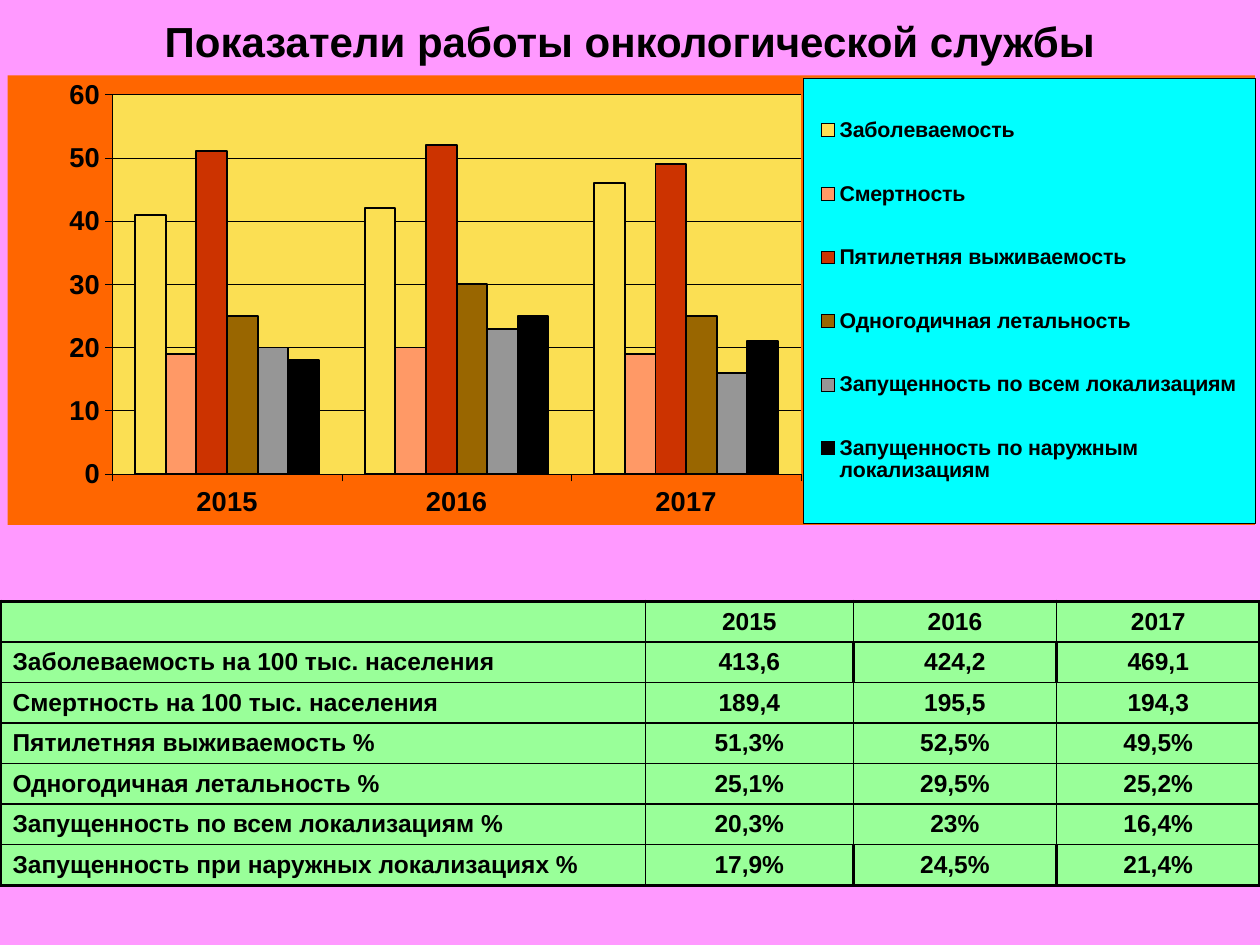
from pptx import Presentation
from pptx.chart.data import CategoryChartData
from pptx.dml.color import RGBColor
from pptx.enum.chart import (XL_CHART_TYPE as ChartType, XL_LEGEND_POSITION as LegendPos,
                             XL_TICK_LABEL_POSITION as LabelPos, XL_TICK_MARK as Tick)
from pptx.enum.text import MSO_ANCHOR as Anchor, PP_ALIGN as Align
from pptx.oxml import parse_xml
from pptx.oxml.ns import nsdecls, qn
from pptx.util import Pt

BLACK, PINK, ORANGE, YELLOW = "000000", "FF99FF", "FF6600", "FBDF53"
CYAN, GREEN = "00FFFF", "99FF99"
THIN, THICK = 1, 2.25

YEARS = ["2015", "2016", "2017"]
INDICATORS = [
    ("Заболеваемость", YELLOW, (41, 42, 46)),
    ("Смертность", "FF9966", (19, 20, 19)),
    ("Пятилетняя выживаемость", "CC3300", (51, 52, 49)),
    ("Одногодичная летальность", "996600", (25, 30, 25)),
    ("Запущенность по всем локализациям", "969696", (20, 23, 16)),
    ("Запущенность по наружным локализациям", BLACK, (18, 25, 21)),
]
ROWS = [
    ["", *YEARS],
    ["Заболеваемость на 100 тыс. населения", "413,6", "424,2", "469,1"],
    ["Смертность на 100 тыс. населения", "189,4", "195,5", "194,3"],
    ["Пятилетняя выживаемость %", "51,3%", "52,5%", "49,5%"],
    ["Одногодичная летальность %", "25,1%", "29,5%", "25,2%"],
    ["Запущенность по всем локализациям %", "20,3%", "23%", "16,4%"],
    ["Запущенность при наружных локализациях %", "17,9%", "24,5%", "21,4%"],
]


def color(hex_code):
    return RGBColor.from_string(hex_code)


def apply(target, formats):
    for name, value in formats.items():
        setattr(target, name, value)


def style_font(font, size):
    apply(font, {"name": "Arial", "size": Pt(size), "bold": True})
    font.color.rgb = color(BLACK)


def style_line(line, width):
    line.width = Pt(width)
    line.color.rgb = color(BLACK)


def chart_layout(x, y, w, h, inner=False):
    target = '<c:layoutTarget val="inner"/>' if inner else ""
    return parse_xml(
        f'<c:layout {nsdecls("c")}><c:manualLayout>{target}'
        '<c:xMode val="edge"/><c:yMode val="edge"/>'
        f'<c:x val="{x}"/><c:y val="{y}"/><c:w val="{w}"/><c:h val="{h}"/>'
        '</c:manualLayout></c:layout>')


def chart_area(fill, border=None):
    stroke = f'<a:solidFill><a:srgbClr val="{border}"/></a:solidFill>' if border else "<a:noFill/>"
    return parse_xml(
        f'<c:spPr {nsdecls("c", "a")}><a:solidFill><a:srgbClr val="{fill}"/></a:solidFill>'
        f'<a:ln w="{Pt(0.28)}">{stroke}</a:ln></c:spPr>')


def drop_layout(parent):
    for layout in parent.findall(qn("c:layout")):
        parent.remove(layout)


def add_title(slide, left, top, width, height):
    frame = slide.shapes.add_textbox(Pt(left), Pt(top), Pt(width), Pt(height)).text_frame
    apply(frame, {"word_wrap": True, "vertical_anchor": Anchor.MIDDLE})
    heading = frame.paragraphs[0]
    heading.alignment = Align.CENTER
    run = heading.add_run()
    run.text = "Показатели работы онкологической службы"
    style_font(run.font, 24)


def add_indicator_chart(slide, left, top, width, height):
    data = CategoryChartData()
    data.categories = YEARS
    for name, _, values in INDICATORS:
        data.add_series(name, values)
    chart = slide.shapes.add_chart(ChartType.COLUMN_CLUSTERED, Pt(left), Pt(top),
                                   Pt(width), Pt(height), data).chart
    chart.has_title = False
    style_font(chart.font, 15.6)

    # Columns
    plot = chart.plots[0]
    apply(plot, {"gap_width": 150, "overlap": 0, "vary_by_categories": False})
    for series, (_, fill, _) in zip(plot.series, INDICATORS):
        series.format.fill.solid()
        series.format.fill.fore_color.rgb = color(fill)
        style_line(series.format.line, 1.11)

    # Axes
    years, scale = chart.category_axis, chart.value_axis
    for axis in (years, scale):
        apply(axis, {"major_tick_mark": Tick.OUTSIDE, "minor_tick_mark": Tick.NONE})
        style_font(axis.tick_labels.font, 15.6)
        style_line(axis.format.line, 0.28)
    years.tick_label_position = LabelPos.LOW
    apply(scale, {"minimum_scale": 0, "maximum_scale": 60, "major_unit": 10,
                  "has_major_gridlines": True})
    style_line(scale.major_gridlines.format.line, 0.28)

    # Legend
    chart.has_legend = True
    legend = chart.legend
    apply(legend, {"position": LegendPos.RIGHT, "include_in_layout": False})
    style_font(legend.font, 12.2)
    box = legend.font and chart.element.find(".//" + qn("c:legend"))
    drop_layout(box)
    box.find(qn("c:legendPos")).addnext(chart_layout(0.638, 0.006, 0.362, 0.99))
    box.find(qn("c:txPr")).addprevious(chart_area(CYAN, BLACK))

    # Plot and chart backgrounds
    plot_area = chart.element.find(".//" + qn("c:plotArea"))
    drop_layout(plot_area)
    plot_area.insert(0, chart_layout(0.084, 0.043, 0.552, 0.844, inner=True))
    plot_area.append(chart_area(YELLOW))
    chart.element.find(qn("c:chart")).addnext(chart_area(ORANGE))


def set_borders(cell, widths):
    properties = cell._tc.get_or_add_tcPr()
    for index, (side, width) in enumerate(widths.items()):
        properties.insert(index, parse_xml(
            f'<a:ln{side} {nsdecls("a")} w="{Pt(width)}"><a:solidFill>'
            f'<a:srgbClr val="{BLACK}"/></a:solidFill></a:ln{side}>'))


def add_indicator_table(slide, left, top, column_widths, row_height):
    last_row, last_col = len(ROWS) - 1, len(column_widths) - 1
    table = slide.shapes.add_table(len(ROWS), len(column_widths), Pt(left), Pt(top),
                                   Pt(sum(column_widths)), Pt(row_height * len(ROWS))).table
    apply(table, {"first_row": False, "horz_banding": False})
    for column, width in zip(table.columns, column_widths):
        column.width = Pt(width)
    for r, texts in enumerate(ROWS):
        table.rows[r].height = Pt(row_height)
        for c, text in enumerate(texts):
            cell = table.cell(r, c)
            apply(cell, {"margin_top": Pt(3.2), "margin_bottom": Pt(3.2),
                         "vertical_anchor": Anchor.MIDDLE})
            cell.fill.solid()
            cell.fill.fore_color.rgb = color(GREEN)
            entry = cell.text_frame.paragraphs[0]
            entry.alignment = Align.CENTER if c else Align.LEFT
            if text:
                run = entry.add_run()
                run.text = text
                style_font(run.font, 14)
            else:
                entry._p.append(parse_xml(f'<a:endParaRPr {nsdecls("a")} sz="1400"/>'))

            # Year dividers are thick in the first and last data rows
            divided = r in (1, last_row)
            set_borders(cell, {
                "L": THICK if c == 0 or divided and c > 1 else THIN,
                "R": THICK if c == last_col or divided and c > 0 else THIN,
                "T": THICK if r == 0 else THIN,
                "B": THICK if r == last_row else THIN,
            })


def main():
    deck = Presentation()
    apply(deck, {"slide_width": Pt(720), "slide_height": Pt(540)})
    slide = deck.slides.add_slide(deck.slide_layouts[6])
    slide.background.fill.solid()
    slide.background.fill.fore_color.rgb = color(PINK)
    add_title(slide, 0, -25, 720, 96.5)
    add_indicator_chart(slide, 4.3, 43, 713, 257)
    add_indicator_table(slide, 0, 343.6, [368.8, 118.8, 116.2, 116.2], 22.95)
    deck.save("out.pptx")


if __name__ == "__main__":
    main()
